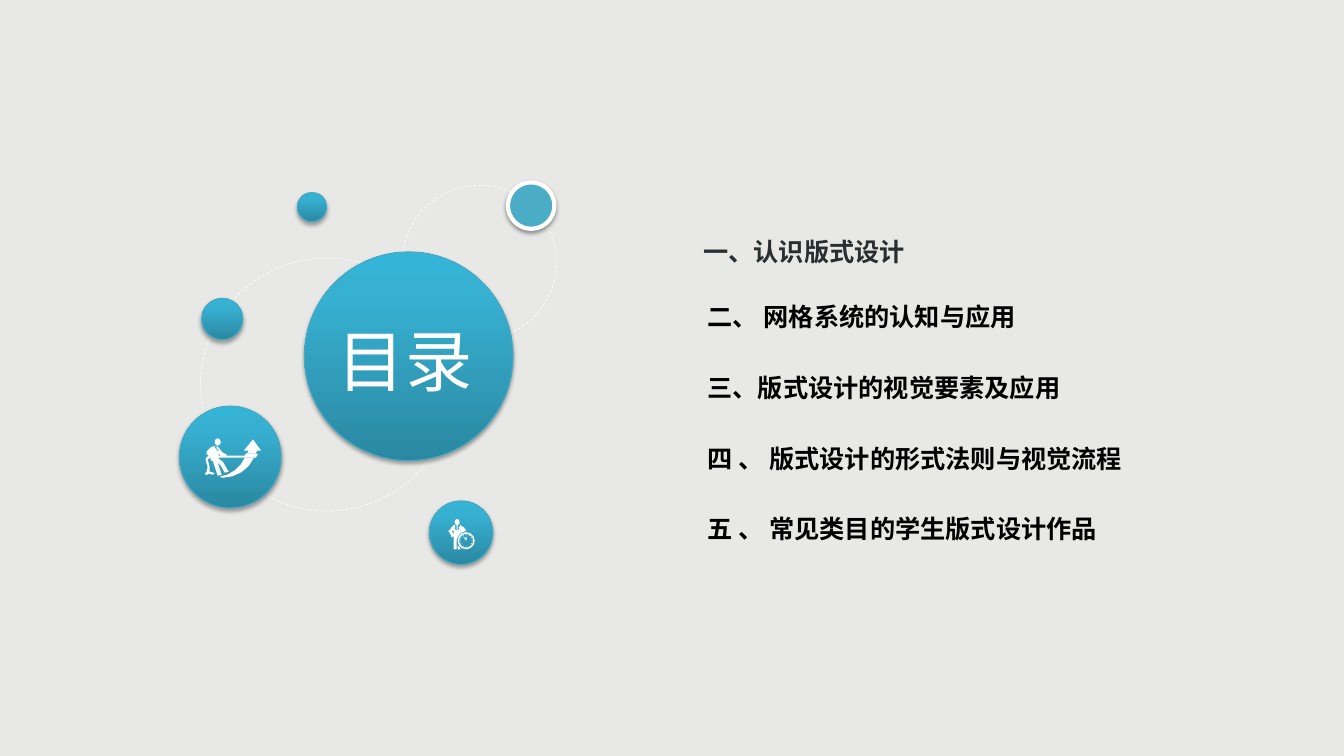
import copy
import dataclasses
import math

import lxml.etree
import pptx
import pptx.dml.color
import pptx.enum.dml
import pptx.enum.shapes
import pptx.enum.text
import pptx.oxml.ns
import pptx.shapes.autoshape
import pptx.shapes.shapetree
import pptx.text.text
import pptx.util

Pt = pptx.util.Pt
RGBColor = pptx.dml.color.RGBColor
Shape = pptx.shapes.autoshape.Shape
Point = tuple[float, float]
qn = pptx.oxml.ns.qn
PRESET = pptx.enum.shapes.MSO_SHAPE

FONT = "Noto Sans CJK SC"
BACKGROUND = RGBColor(0xE8, 0xE8, 0xE6)
WHITE = RGBColor(0xFF, 0xFF, 0xFF)
BLACK = RGBColor(0, 0, 0)
INK = RGBColor(0x2B, 0x2E, 0x30)
TEAL = RGBColor(0x4B, 0xAC, 0xC6)
EDGE = RGBColor(0x46, 0xAA, 0xC5)
GRADIENT = [
    (0, RGBColor(0x2A, 0x88, 0xA2)),
    (0.8, RGBColor(0x37, 0xB1, 0xD2)),
    (1, RGBColor(0x34, 0xB4, 0xD6)),
]
ICON_UNIT = 0.72  # points per step of the icon drawings


@dataclasses.dataclass(frozen=True)
class Circle:
    left: float
    top: float
    size: float


@dataclasses.dataclass(frozen=True)
class Icon:
    left: float
    top: float
    head: tuple[float, float, float, float]
    outlines: list[list[list[Point]]]


RINGS = [Circle(287.28, 132.48, 110.16), Circle(143.28, 184.32, 180.72)]
BALLS = [
    Circle(217.44, 180, 149.04),
    Circle(306.72, 357.84, 45.36),
    Circle(144, 213.12, 29.52),
    Circle(212.4, 137.52, 20.88),
    Circle(128.16, 290.16, 72.72),
]
RIMMED_BALL = Circle(362.88, 130.32, 33.12)

# Outlines are in icon units; each one is a list of contours.
CLOCK_MAN = Icon(320.4, 370.8, (6, 0, 5, 6), [
    [[(17, 12), (17, 10), (16, 10), (16, 9), (15, 8), (13, 7), (12, 6), (11, 6), (12, 7),
      (10, 8), (11, 9), (9, 12), (9, 6), (8, 6), (8, 12), (6, 9), (7, 8), (6, 7), (7, 6),
      (5, 6), (4, 7), (1, 11), (0, 11), (0, 13), (1, 13), (1, 14), (2, 15), (3, 18),
      (5, 17), (5, 30), (8, 30), (8, 21), (9.5, 17), (12.5, 13.5)],
     [(12, 11), (12, 10), (13, 11), (11, 12), (10, 12)],
     [(5, 15), (4, 14), (4, 13), (3, 12), (5, 11)]],
    [[(9, 26), (9, 30), (12, 30), (11, 28)]],
    [[(18, 21), (18, 18), (17, 18), (17, 20), (15, 17), (15, 18), (17, 21)]],
])
ROPE_MAN = Icon(146.16, 313.2, (10, 0, 6, 7), [
    [[(40, 19), (35.7, 25.9), (30.1, 31.5), (23.3, 35.6), (15, 38), (18, 39), (27.6, 37.6),
      (36.5, 33.5), (43.9, 27.2), (49, 19)]],
    [[(42, 15), (51, 15), (52, 12), (56, 12), (48, 1), (39, 12), (44, 12)]],
    [[(52, 15), (41, 15), (40, 16), (40, 17), (22, 17), (22, 16), (18, 14), (14, 9), (13, 9),
      (14, 11), (13, 14), (13, 7), (12, 7), (12, 14), (11, 10), (10, 9), (11, 8), (8, 8),
      (6, 9), (4, 11), (2, 13), (2, 16), (3, 16), (4, 17), (1, 20), (2, 25), (3, 28),
      (2, 33), (0, 35), (1, 36), (3, 36), (4, 35), (8, 36), (10, 35), (9, 34), (5, 33),
      (5, 28), (4, 24), (3, 21), (6, 19), (6, 22), (8, 22), (13, 37), (17, 36), (13, 24),
      (16, 27), (20, 34), (24, 33), (18, 23), (14, 20), (14, 19), (51, 19), (52, 17),
      (53, 16)],
     [(14, 17), (14, 15), (15, 16), (16, 17)]],
])
AGENDA = [
    "一、认识版式设计",
    "二、 网格系统的认知与应用",
    "三、版式设计的视觉要素及应用",
    "四 、 版式设计的形式法则与视觉流程",
    "五 、 常见类目的学生版式设计作品",
]


def add_circle(slide: pptx.slide.Slide, circle: Circle, color: RGBColor, width: float) -> Shape:
    shape = slide.shapes.add_shape(
        PRESET.OVAL, Pt(circle.left), Pt(circle.top), Pt(circle.size), Pt(circle.size))
    shape.line.color.rgb = color
    shape.line.width = Pt(width)
    shape.shadow.inherit = False
    return shape


def fill_gradient(shape: Shape) -> None:
    shape.fill.gradient()
    shape.fill.gradient_angle = 90
    stop_list = shape.element.spPr.find(".//" + qn("a:gsLst"))
    stop_list.append(copy.deepcopy(stop_list[0]))
    for stop, (position, color) in zip(shape.fill.gradient_stops, GRADIENT):
        stop.position = position
        stop.color.rgb = color


def add_shadow(shape: Shape, distance: float, opacity: int) -> None:
    effects = shape.element.spPr.find(qn("a:effectLst"))
    shadow = lxml.etree.SubElement(
        effects, qn("a:outerShdw"), blurRad=str(Pt(3.1)), dist=str(Pt(distance)),
        dir="5400000", algn="ctr", rotWithShape="0")
    color = lxml.etree.SubElement(shadow, qn("a:srgbClr"), val=str(BLACK))
    lxml.etree.SubElement(color, qn("a:alpha"), val=str(opacity * 1000))


def paint_white(shape: Shape) -> None:
    shape.fill.solid()
    shape.fill.fore_color.rgb = WHITE
    shape.line.fill.background()
    shape.shadow.inherit = False


def add_icon_part(shapes: pptx.shapes.shapetree.GroupShapes, icon: Icon, preset: PRESET,
                  left: float, top: float, width: float, height: float) -> Shape:
    shape = shapes.add_shape(
        preset, Pt(icon.left + left * ICON_UNIT), Pt(icon.top + top * ICON_UNIT),
        Pt(width * ICON_UNIT), Pt(height * ICON_UNIT))
    paint_white(shape)
    return shape


def add_icon(slide: pptx.slide.Slide, icon: Icon) -> pptx.shapes.shapetree.GroupShapes:
    shapes = slide.shapes.add_group_shape().shapes
    add_icon_part(shapes, icon, PRESET.OVAL, *icon.head)
    for outline in icon.outlines:
        contours = [[(Pt(x * ICON_UNIT), Pt(y * ICON_UNIT)) for x, y in contour]
                    for contour in outline]
        builder = shapes.build_freeform(*contours[0][0])
        builder.add_line_segments(contours[0][1:], close=True)
        for hole in contours[1:]:
            builder.move_to(*hole[0])
            builder.add_line_segments(hole[1:], close=True)
        paint_white(builder.convert_to_shape(Pt(icon.left), Pt(icon.top)))
    return shapes


def add_clock_face(shapes: pptx.shapes.shapetree.GroupShapes) -> None:
    face = add_icon_part(shapes, CLOCK_MAN, PRESET.DONUT, 9, 13, 17, 17)
    face.adjustments[0] = 0.09
    for hour in range(12):
        angle = math.radians(30 * hour)
        add_icon_part(shapes, CLOCK_MAN, PRESET.OVAL, 17 + 6 * math.sin(angle),
                      21 - 6 * math.cos(angle), 1, 1)


def place(shape: Shape, left: float, top: float, width: float, height: float) -> None:
    shape.left, shape.top, shape.width, shape.height = Pt(left), Pt(top), Pt(width), Pt(height)
    frame = shape.text_frame
    frame.word_wrap = True
    frame.auto_size = pptx.enum.text.MSO_AUTO_SIZE.NONE
    frame.vertical_anchor = pptx.enum.text.MSO_ANCHOR.TOP


def format_run(paragraph: pptx.text.text._Paragraph, size: float, color: RGBColor,
               bold: bool) -> None:
    font = paragraph.runs[0].font
    font.size, font.bold, font.name = Pt(size), bold, FONT
    font.color.rgb = color
    lxml.etree.SubElement(paragraph.runs[0].font._element, qn("a:ea"), typeface=FONT)


def main() -> None:
    presentation = pptx.Presentation()
    presentation.slide_width, presentation.slide_height = Pt(960), Pt(540)
    slide = presentation.slides.add_slide(presentation.slide_layouts[1])
    slide.background.fill.solid()
    slide.background.fill.fore_color.rgb = BACKGROUND

    # Orbits and balls
    for circle in RINGS:
        ring = add_circle(slide, circle, WHITE, 0.5)
        ring.fill.background()
        ring.line.dash_style = pptx.enum.dml.MSO_LINE.DASH
    for circle in BALLS:
        ball = add_circle(slide, circle, EDGE, 0.75)
        fill_gradient(ball)
        add_shadow(ball, 1.8, 35)
    rimmed_ball = add_circle(slide, RIMMED_BALL, WHITE, 3)
    rimmed_ball.fill.solid()
    rimmed_ball.fill.fore_color.rgb = TEAL
    add_shadow(rimmed_ball, 1.6, 38)

    # Icons
    add_clock_face(add_icon(slide, CLOCK_MAN))
    add_icon(slide, ROPE_MAN)

    # Title, in front of the large ball
    title = slide.shapes.title
    place(title, 227.52, 224.64, 123.84, 65.52)
    title.text_frame.text = "目录"
    title.text_frame.paragraphs[0].alignment = pptx.enum.text.PP_ALIGN.CENTER
    format_run(title.text_frame.paragraphs[0], 48, WHITE, False)
    title.element.getparent().append(title.element)

    # Agenda list
    agenda = slide.placeholders[1]
    place(agenda, 502.3, 168.5, 370, 250)
    frame = agenda.text_frame
    frame.margin_left = frame.margin_top = frame.margin_right = frame.margin_bottom = Pt(0)
    frame.text = "\n".join(AGENDA)
    for index, paragraph in enumerate(frame.paragraphs):
        paragraph.space_before = Pt((0, 25)[index] if index < 2 else 29)
        properties = paragraph._p.get_or_add_pPr()
        properties.set("marL", str(Pt(3.1 if index else 0)))
        properties.set("indent", "0")
        lxml.etree.SubElement(properties, qn("a:buNone"))
        format_run(paragraph, 18, BLACK if index else INK, True)

    presentation.save("out.pptx")


if __name__ == "__main__":
    main()
